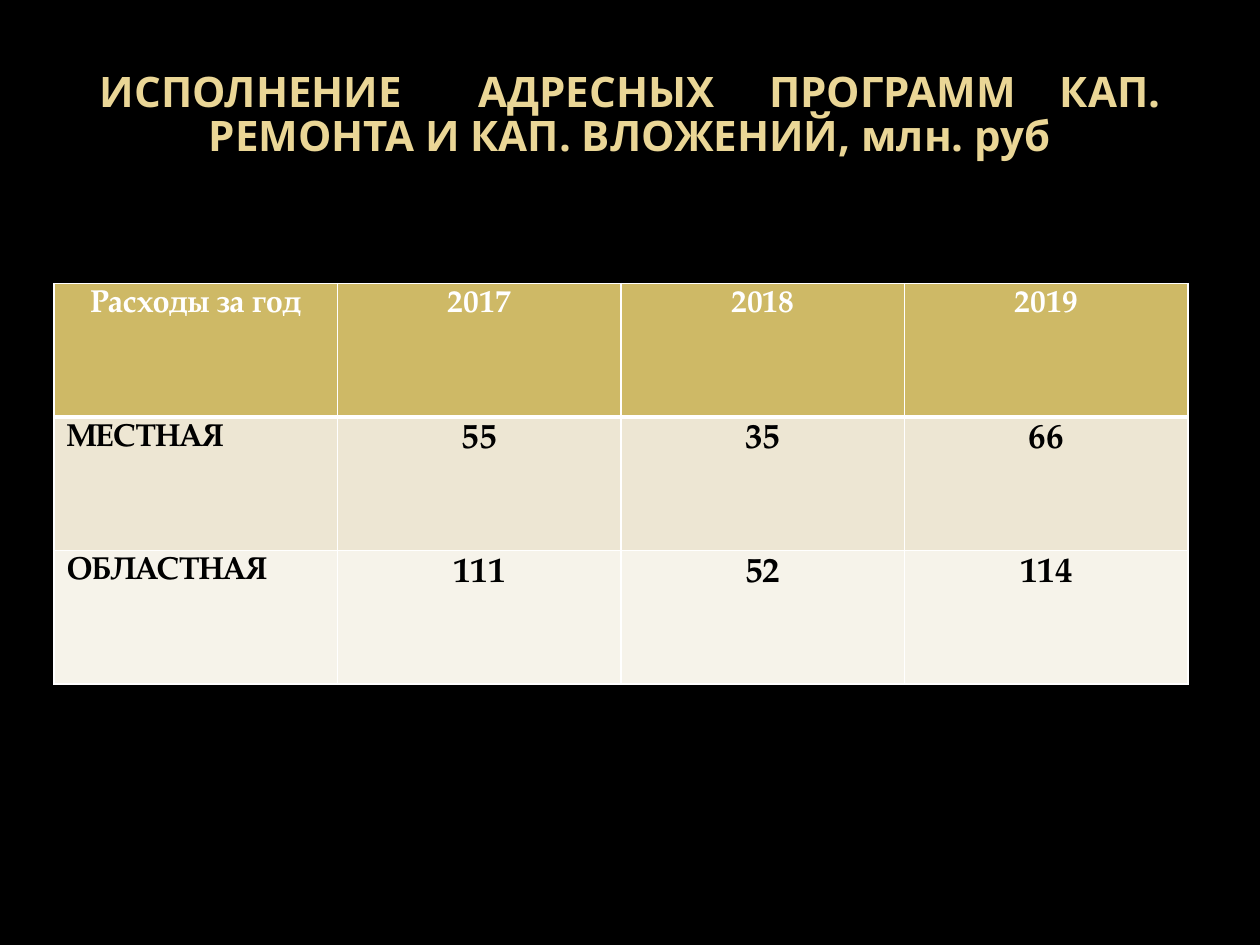
from lxml.etree import SubElement
from pptx import Presentation
from pptx.dml.color import RGBColor
from pptx.enum.text import MSO_ANCHOR as Anchor, MSO_AUTO_SIZE as AutoSize, PP_ALIGN as Align
from pptx.oxml.ns import qn
from pptx.util import Inches, Pt

BLACK = RGBColor(0x00, 0x00, 0x00)
WHITE = RGBColor(0xFF, 0xFF, 0xFF)
PALE_GOLD = RGBColor(0xEA, 0xD6, 0x96)
GOLD = RGBColor(0xCE, 0xB9, 0x66)
SAND = RGBColor(0xED, 0xE6, 0xD3)
IVORY = RGBColor(0xF6, 0xF3, 0xEA)

TITLE_FONT = "Open Sans"
TABLE_FONT = "TeX Gyre Pagella"
TITLE_PARTS = [
    ("ИСПОЛНЕНИЕ", 37.4),
    ("АДРЕСНЫХ", 25),
    ("ПРОГРАММ", 18.7),
    ("КАП. РЕМОНТА И КАП. ВЛОЖЕНИЙ, млн. руб", 0),
]
EXPENSES = [
    ("Расходы за год", "2017", "2018", "2019"),
    ("МЕСТНАЯ", "55", "35", "66"),
    ("ОБЛАСТНАЯ", "111", "52", "114"),
]


def add_text(paragraph, text, font=TABLE_FONT, size=18, color=BLACK, bold=True, spacing=0):
    run = paragraph.add_run()
    run.text = text
    run.font.name = font
    run.font.size = Pt(size)
    run.font.bold = bold
    run.font.color.rgb = color
    if spacing:
        run.font._element.set("spc", str(round(spacing * 100)))


class SlideBuilder:
    def __init__(self, presentation):
        self.width = presentation.slide_width
        self.height = presentation.slide_height
        self.slide = presentation.slides.add_slide(presentation.slide_layouts[5])
        background = self.slide.background.fill
        background.solid()
        background.fore_color.rgb = BLACK

    def box(self, left, top, width, height):
        return (round(left * self.width), round(top * self.height),
                round(width * self.width), round(height * self.height))

    def title(self, parts, *area):
        shape = self.slide.shapes.title
        shape.left, shape.top, shape.width, shape.height = self.box(*area)
        frame = shape.text_frame
        frame.word_wrap = True
        frame.auto_size = AutoSize.NONE
        frame.vertical_anchor = Anchor.MIDDLE
        paragraph = frame.paragraphs[0]
        paragraph.alignment = Align.CENTER
        paragraph.line_spacing = 0.88
        style = dict(font=TITLE_FONT, size=24, color=PALE_GOLD)
        for text, gap in parts:
            add_text(paragraph, text, **style)
            if gap:
                add_text(paragraph, " ", spacing=gap, **style)

    def borders(self, cell, bottom):
        properties = cell._tc.get_or_add_tcPr()
        fill = properties[0]
        for side, points in (("L", 1), ("R", 1), ("T", 1), ("B", bottom)):
            line = SubElement(properties, qn(f"a:ln{side}"), w=str(Pt(points)))
            solid = SubElement(line, qn("a:solidFill"))
            SubElement(solid, qn("a:srgbClr"), val=str(WHITE))
            fill.addprevious(line)

    def table(self, rows, fills, *area):
        shape = self.slide.shapes.add_table(len(rows), len(rows[0]), *self.box(*area))
        for row, values in enumerate(rows):
            for column, value in enumerate(values):
                cell = shape.table.cell(row, column)
                cell.fill.solid()
                cell.fill.fore_color.rgb = fills[row]
                self.borders(cell, bottom=1 if row else 3)
                paragraph = cell.text_frame.paragraphs[0]
                paragraph.alignment = Align.LEFT if row and not column else Align.CENTER
                add_text(paragraph, value, size=20 if row and column else 18,
                         color=BLACK if row else WHITE)


def main():
    presentation = Presentation()
    presentation.slide_width = Inches(10)
    presentation.slide_height = Inches(7.5)
    builder = SlideBuilder(presentation)
    builder.title(TITLE_PARTS, 0.05, 0.04, 0.9, 1 / 6)
    builder.table(EXPENSES, (GOLD, SAND, IVORY), 0.043, 0.3, 0.9, 0.424)
    presentation.save("out.pptx")


if __name__ == "__main__":
    main()
